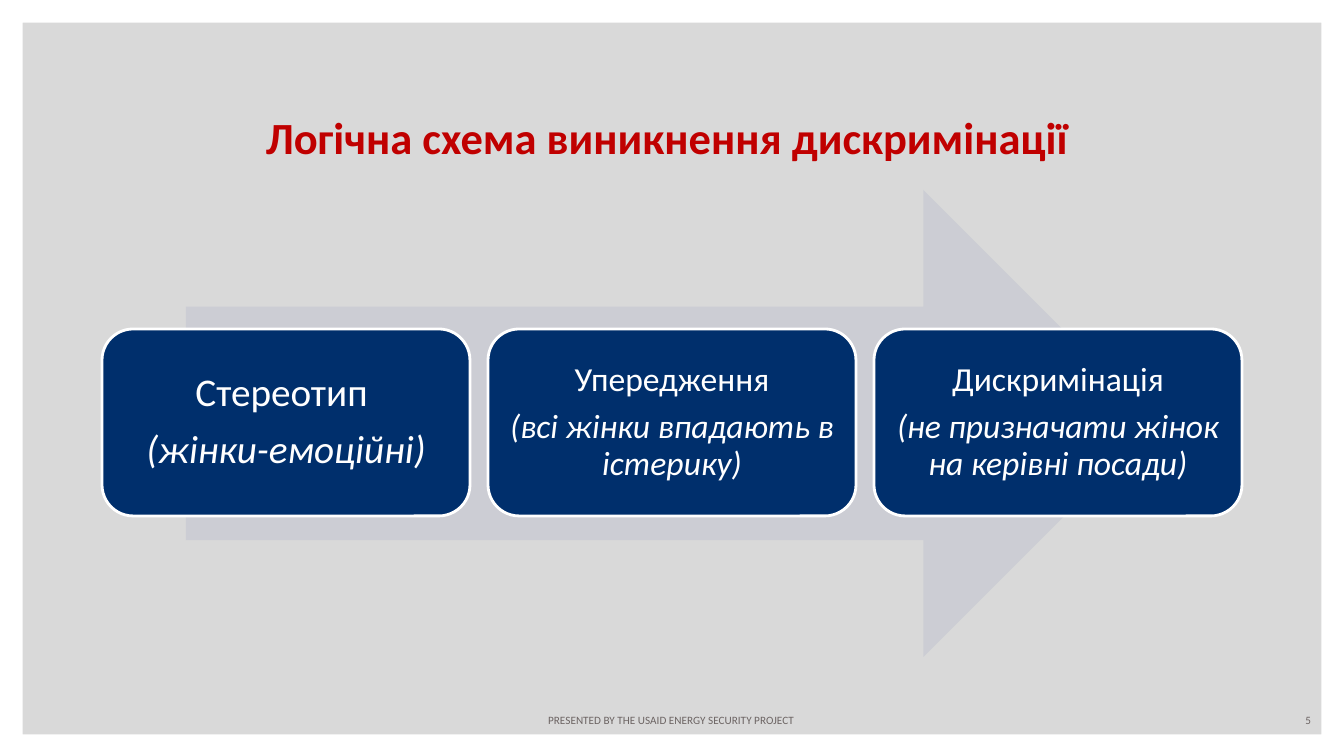
from pptx import Presentation
from pptx import util as u
from pptx.dml.color import RGBColor
from pptx.enum import shapes, text

PX = 914400 / 100.8  # EMU in one px
COLORS = {"back": "D9D9D9", "white": "FFFFFF", "red": "C00000",
          "navy": "002F6C", "arrow": "CCCDD4", "grey": "6C6463"}
SHAPE = shapes.MSO_SHAPE
ALIGN = text.PP_ALIGN
ANCHOR = text.MSO_ANCHOR


def px(*lengths):
    return [u.Emu(round(n * PX)) for n in lengths]


def rgb(name):
    return RGBColor.from_string(COLORS[name])


class Deck:
    """Holds the style and the current slide."""

    font = "Calibri"

    def __init__(self, width, height):
        self.prs = Presentation()
        self.prs.slide_width, self.prs.slide_height = px(width, height)
        self.s = None

    def slide(self, color):
        self.s = self.prs.slides.add_slide(self.prs.slide_layouts[5])
        fill = self.s.background.fill
        fill.solid()
        fill.fore_color.rgb = rgb(color)

    def style(self, p, size, color, align=ALIGN.CENTER, bold=False, italic=False):
        p.alignment = align
        p.font.name, p.font.size = self.font, u.Pt(size)
        p.font.bold, p.font.italic = bold, italic
        p.font.color.rgb = rgb(color)

    def title(self, words, box, size, color):
        sp = self.s.shapes.title
        sp.left, sp.top, sp.width, sp.height = px(*box)
        tf = sp.text_frame
        tf.text = words
        tf.auto_size = text.MSO_AUTO_SIZE.NONE
        tf.vertical_anchor = ANCHOR.BOTTOM
        self.style(tf.paragraphs[0], size, color, bold=True)

    def shape(self, kind, box, fill, line=None):
        sp = self.s.shapes.add_shape(kind, *px(*box))
        sp.shadow.inherit = False
        sp.fill.solid()
        sp.fill.fore_color.rgb = rgb(fill)
        if line:
            sp.line.color.rgb = rgb(line)
            sp.line.width = u.Pt(2)
        else:
            sp.line.fill.background()
        return sp

    def label(self, words, box, align):
        tf = self.s.shapes.add_textbox(*px(*box)).text_frame
        tf.word_wrap = True
        tf.vertical_anchor = ANCHOR.MIDDLE
        tf.text = words
        self.style(tf.paragraphs[0], 8, "grey", align)

    def card(self, term, example, box, size, margin):
        tf = self.shape(SHAPE.ROUNDED_RECTANGLE, box, "navy", "white").text_frame
        tf.word_wrap = True
        tf.vertical_anchor = ANCHOR.MIDDLE
        tf.margin_left, tf.margin_top, tf.margin_right, tf.margin_bottom = px(*[margin] * 4)
        tf.text = f"{term}\n{example}"
        for p, italic in zip(tf.paragraphs, (False, True)):
            self.style(p, size, "white", italic=italic)
            p.line_spacing = 0.9
        tf.paragraphs[1].space_before = u.Pt(round(size * 0.35))


def main():
    deck = Deck(1344, 756)
    deck.slide("back")

    # White border
    frame = deck.shape(SHAPE.FRAME, (0, 0, 1344, 757), "white")
    frame.adjustments[0] = 0.03

    # Footer and slide number
    deck.label("PRESENTED BY THE USAID ENERGY SECURITY PROJECT ",
               (460, 709, 425, 23), ALIGN.CENTER)
    deck.label("5", (1008, 709, 313, 23), ALIGN.RIGHT)

    # Title
    deck.title("Логічна схема виникнення дискримінації ",
               (101, 103, 1142, 65), 31.8, "red")

    # Arrow behind the three stages
    deck.shape(SHAPE.RIGHT_ARROW, (186, 190, 971, 467), "arrow")

    # Stages
    stages = [
        ("Стереотип ", "(жінки-емоційні)", 28, 12),
        ("Упередження", "(всі жінки впадають в істерику)", 24, 10),
        ("Дискримінація", "(не призначати жінок на керівні посади)", 24, 10),
    ]
    for i, (term, example, size, margin) in enumerate(stages):
        deck.card(term, example, (102 + 386 * i, 329, 368, 187), size, margin)

    deck.prs.save("out.pptx")


if __name__ == "__main__":
    main()
